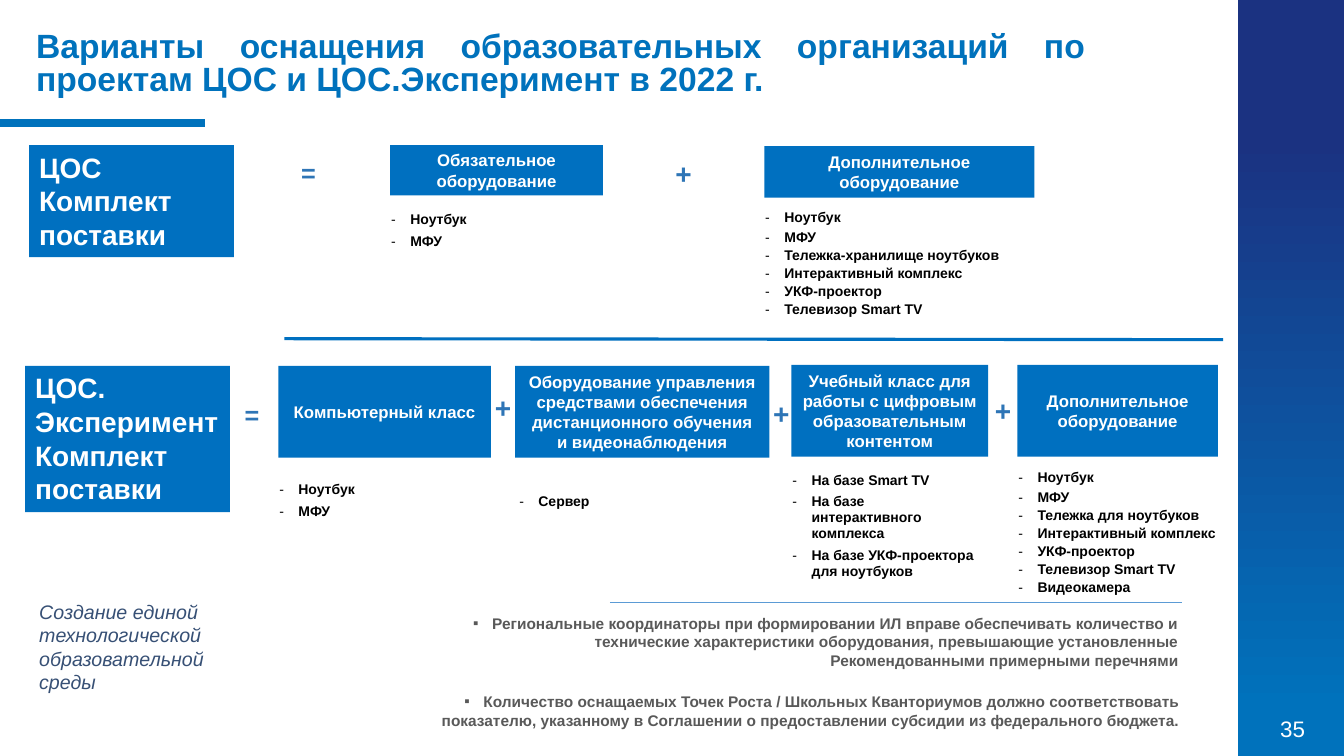
import pptx
import pptx.util
import pptx.dml.color
import pptx.enum.shapes
import pptx.enum.text
import pptx.oxml.ns
import lxml.etree

CELL = 0.1
WIDTH, HEIGHT = 133.3, 75
FONT = "Arial"
COLORS = {
    "box": "0070C0", "brand": "0072BC", "navy": "1B3281", "sign": "2E75B6",
    "rule": "5B9BD5", "slogan": "375075", "note": "595959",
    "white": "FFFFFF", "black": "000000",
}
ALIGN = pptx.enum.text.PP_ALIGN
ANCHOR = pptx.enum.text.MSO_ANCHOR
RECTANGLE = pptx.enum.shapes.MSO_SHAPE.RECTANGLE
STRAIGHT = pptx.enum.shapes.MSO_CONNECTOR.STRAIGHT


def grid(*cells):
    return [pptx.util.Inches(round(cell * CELL, 2)) for cell in cells]


def color(name):
    return pptx.dml.color.RGBColor.from_string(COLORS[name])


def add_bullet(paragraph, character):
    properties = paragraph._p.get_or_add_pPr()
    indent = grid(1.9)[0]
    properties.set("marL", str(indent))
    properties.set("indent", str(-indent))
    for tag, name, value in (("a:buFont", "typeface", FONT), ("a:buChar", "char", character)):
        element = lxml.etree.SubElement(properties, pptx.oxml.ns.qn(tag))
        element.set(name, value)


def write(frame, text, size, color_name, bold=True, italic=False,
          align=ALIGN.LEFT, bullet=None, spacing=None):
    frame.word_wrap = True
    frame.text = text
    for paragraph in frame.paragraphs:
        paragraph.alignment = align
        if spacing:
            paragraph.line_spacing = spacing
        if bullet:
            add_bullet(paragraph, bullet)
        for run in paragraph.runs:
            run.font.name = FONT
            run.font.size = pptx.util.Pt(size)
            run.font.bold = bold
            run.font.italic = italic
            run.font.color.rgb = color(color_name)


def add_label(slide, place, text, size, color_name, anchor=ANCHOR.TOP, **style):
    label = slide.shapes.add_textbox(*grid(*place))
    label.text_frame.vertical_anchor = anchor
    write(label.text_frame, text, size, color_name, **style)


def add_rectangle(slide, place):
    shape = slide.shapes.add_shape(RECTANGLE, *grid(*place))
    shape.shadow.inherit = False
    shape.line.fill.background()
    return shape


def add_box(slide, place, text, size=12, align=ALIGN.CENTER, anchor=ANCHOR.MIDDLE):
    shape = add_rectangle(slide, place)
    shape.fill.solid()
    shape.fill.fore_color.rgb = color("box")
    shape.text_frame.vertical_anchor = anchor
    write(shape.text_frame, text, size, "white", align=align)


def add_sidebar(slide):
    shape = add_rectangle(slide, (122.8, 0, 10.5, HEIGHT))
    shape.fill.gradient()
    shape.fill.gradient_angle = 270
    for stop, name, position in zip(shape.fill.gradient_stops, ("navy", "brand"), (0.18, 0.94)):
        stop.color.rgb = color(name)
        stop.position = position


def add_line(slide, ends, color_name, width):
    line = slide.shapes.add_connector(STRAIGHT, *grid(*ends))
    line.line.color.rgb = color(color_name)
    line.line.width = pptx.util.Pt(width)
    lxml.etree.SubElement(line._element.spPr, pptx.oxml.ns.qn("a:effectLst"))


def add_sign(slide, left, top, sign):
    size = 18 if sign == "=" else 20
    add_label(slide, (left, top, 6.4, 4.4), sign, size, "sign", align=ALIGN.CENTER)


def add_equipment(slide, left, top, width, items, heights):
    frame = slide.shapes.add_table(len(items), 1, *grid(left, top, width, sum(heights)))
    table = frame.table
    table.first_row = False
    table.horz_banding = False
    for row, item, height in zip(table.rows, items, heights):
        row.height = grid(height)[0]
        cell = row.cells[0]
        cell.fill.background()
        cell.margin_left = cell.margin_top = cell.margin_right = grid(0.1)[0]
        cell.margin_bottom = 0
        cell.vertical_anchor = ANCHOR.MIDDLE
        write(cell.text_frame, item, 10, "black", bullet="-")


def main():
    presentation = pptx.Presentation()
    presentation.slide_width, presentation.slide_height = grid(WIDTH, HEIGHT)
    slide = presentation.slides.add_slide(presentation.slide_layouts[6])

    add_sidebar(slide)
    add_label(slide, (124.2, 70.2, 8, 4.1), "35", 16, "white", ANCHOR.MIDDLE,
              bold=False, align=ALIGN.CENTER)
    add_line(slide, (0, 12.2, 20.3, 12.2), "brand", 6)
    add_label(slide, (2.6, 2.8, 106, 7.5),
              "Варианты оснащения образовательных организаций по проектам "
              "ЦОС и ЦОС.Эксперимент в 2022 г.",
              24, "brand", align=ALIGN.JUSTIFY, spacing=0.8)

    for place, text in (
        ((2.9, 14.4, 20.3, 11.1), "ЦОС\nКомплект поставки"),
        ((2.5, 36.3, 20.3, 14.5), "ЦОС.\nЭксперимент\nКомплект поставки"),
    ):
        add_box(slide, place, text, 20, ALIGN.LEFT, ANCHOR.TOP)

    for place, text in (
        ((38.7, 14.4, 21.1, 5), "Обязательное оборудование"),
        ((75.8, 14.5, 26.8, 5.1), "Дополнительное оборудование"),
        ((27.6, 36.3, 21.1, 9.1), "Компьютерный класс"),
        ((51.1, 36.3, 25.2, 9.1), "Оборудование управления средствами обеспечения "
                                  "дистанционного обучения и видеонаблюдения"),
        ((78.5, 36.2, 19.5, 9.1), "Учебный класс для работы с цифровым "
                                  "образовательным контентом"),
        ((100.9, 36.2, 19.9, 9.1), "Дополнительное оборудование"),
    ):
        add_box(slide, place, text)

    for left, top, sign in (
        (27.4, 15.1, "="), (64.6, 15, "+"), (21.8, 39.1, "="),
        (46.7, 38.3, "+"), (74.3, 38.8, "+"), (96.3, 38.5, "+"),
    ):
        add_sign(slide, left, top, sign)

    basic = ["Ноутбук", "МФУ"]
    projector = ["Интерактивный комплекс", "УКФ-проектор", "Телевизор Smart TV"]
    for left, top, width, items, heights in (
        (38.7, 20.6, 21.1, basic, [2.2] * 2),
        (75.8, 20.4, 26.8, basic + ["Тележка-хранилище ноутбуков"] + projector,
         [2.2] + [1.78] * 5),
        (27.6, 47.4, 21.1, basic, [2.2] * 2),
        (51.4, 47.5, 21.1, ["Сервер"], [4.4]),
        (78.5, 46.5, 18.4, ["На базе Smart TV", "На базе интерактивного комплекса",
                            "На базе УКФ-проектора для ноутбуков"], [2.2, 5.2, 3.9]),
        (100.9, 46.2, 19.9, basic + ["Тележка для ноутбуков"] + projector + ["Видеокамера"],
         [2.2] + [1.78] * 6),
    ):
        add_equipment(slide, left, top, width, items, heights)

    add_line(slide, (28.2, 33.6, 121.3, 33.7), "box", 2.25)
    add_line(slide, (60.5, 59.8, 117.2, 59.8), "rule", 0.5)
    add_label(slide, (2.9, 59, 24.1, 10.4),
              "Создание единой технологической\nобразовательной среды",
              14, "slogan", bold=False, italic=True)
    for place, text in (
        ((45.1, 60.4, 72.8, 6.6),
         "Региональные координаторы при формировании ИЛ вправе обеспечивать количество "
         "и технические характеристики оборудования, превышающие установленные "
         "Рекомендованными примерными перечнями"),
        ((40.1, 68.2, 77.9, 4.7),
         "Количество оснащаемых Точек Роста / Школьных Кванториумов должно соответствовать "
         "показателю, указанному в Соглашении о предоставлении субсидии из федерального бюджета."),
    ):
        add_label(slide, place, text, 11, "note", align=ALIGN.RIGHT, bullet="▪")

    presentation.save("out.pptx")


if __name__ == "__main__":
    main()
